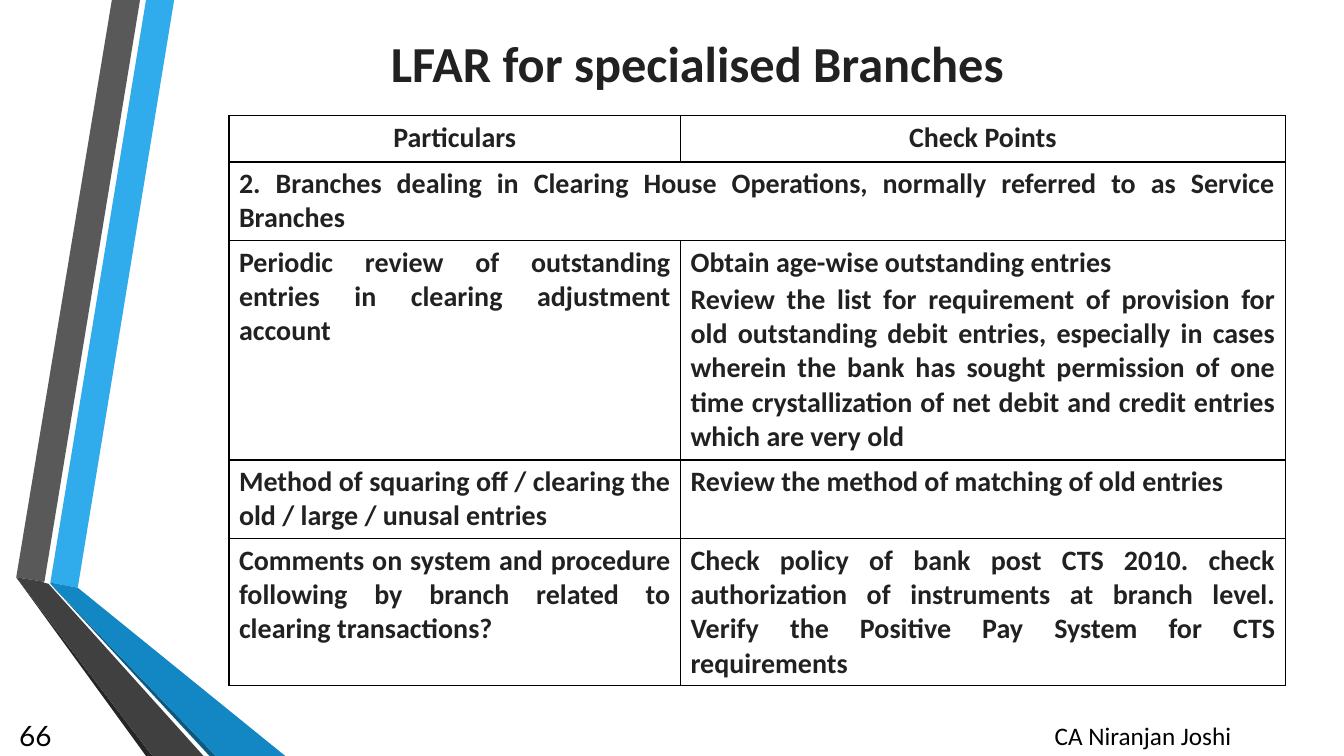
from dataclasses import dataclass

from lxml import etree
from pptx import Presentation
from pptx import util as u
from pptx.dml import color
from pptx.enum import text
from pptx.oxml import ns

ALIGN = text.PP_ALIGN


@dataclass(frozen=True)
class Theme:
    ink: str = "212121"
    black: str = "000000"
    blue: str = "30ACEC"
    blue_fold: str = "1287C3"
    blue_edge: str = "0C5A82"
    grey: str = "595959"
    grey_fold: str = "404040"
    grey_edge: str = "262626"
    font: str = "Calibri"
    number_font: str = "Lato"
    title_size: int = 36
    body_size: int = 20
    footer_size: int = 18
    paragraph_gap: int = 2
    border_width: int = 1


THEME = Theme()

# Ribbon outlines in centimetres, from back to front
RIBBONS = [
    (THEME.blue, [(1.27, 14.68), (1.96, 14.81), (4.39, 0), (3.68, 0)]),
    (THEME.grey, [(3.53, 0), (2.82, 0), (0.41, 14.55), (1.12, 14.66)]),
    (THEME.grey_edge, [(0.41, 14.55), (3.68, 19.05), (3.84, 19.05)]),
    (THEME.blue_edge, [(1.27, 14.71), (5.28, 19.05), (5.44, 19.05)]),
    (THEME.blue_fold, [(1.27, 14.71), (5.44, 19.05), (7.19, 19.05),
                       (1.96, 14.81), (1.27, 14.68)]),
    (THEME.grey_fold, [(5.13, 19.05), (1.22, 14.71), (1.09, 14.68),
                       (1.12, 14.66), (0.41, 14.55), (3.84, 19.05)]),
]

COLUMN_WIDTHS = [11.38, 15.24]
# Row height and the paragraphs of each cell; a lone cell spans the row
ROWS = [
    (1.16, [["Particulars"], ["Check Points"]]),
    (1.98, [["2. Branches dealing in Clearing House Operations, "
             "normally referred to as Service Branches"]]),
    (5.53, [["Periodic review of outstanding entries in clearing "
             "adjustment account"],
            ["Obtain age-wise outstanding entries",
             "Review the list for requirement of provision for old "
             "outstanding debit entries, especially in cases wherein the "
             "bank has sought permission of one time crystallization of net "
             "debit and credit entries which are very old"]]),
    (1.98, [["Method of squaring off / clearing the old / large / unusal "
             "entries"],
            ["Review the method of matching of old entries"]]),
    (3.7, [["Comments on system and procedure following by branch related "
            "to clearing transactions?"],
           ["Check policy of bank post CTS 2010. check authorization of "
            "instruments at branch level. Verify the Positive Pay System "
            "for CTS requirements"]]),
]


def rgb(value):
    return color.RGBColor.from_string(value)


def style_paragraph(paragraph, size, ink, align, bold=False, font=THEME.font):
    paragraph.alignment = align
    paragraph.font.name = font
    paragraph.font.size = u.Pt(size)
    paragraph.font.bold = bold
    paragraph.font.color.rgb = rgb(ink)


def add_ribbon(slide, fill, points):
    corners = [(u.Cm(x), u.Cm(y)) for x, y in points]
    builder = slide.shapes.build_freeform(*corners[0])
    builder.add_line_segments(corners[1:], close=True)
    shape = builder.convert_to_shape()
    shape.shadow.inherit = False
    shape.fill.solid()
    shape.fill.fore_color.rgb = rgb(fill)
    shape.line.fill.background()


def add_label(slide, box, words, size, ink, align,
              anchor=text.MSO_ANCHOR.MIDDLE, **style):
    frame = slide.shapes.add_textbox(*map(u.Cm, box)).text_frame
    frame.word_wrap = True
    frame.vertical_anchor = anchor
    frame.text = words
    style_paragraph(frame.paragraphs[0], size, ink, align, **style)


def add_borders(cell):
    properties = cell._tc.get_or_add_tcPr()
    for index, side in enumerate(("lnL", "lnR", "lnT", "lnB")):
        line = etree.Element(ns.qn(f"a:{side}"),
                             w=str(u.Pt(THEME.border_width)))
        fill = etree.SubElement(line, ns.qn("a:solidFill"))
        etree.SubElement(fill, ns.qn("a:srgbClr"), val=THEME.black)
        properties.insert(index, line)


def fill_cell(cell, paragraphs, align):
    cell.text = "\n".join(paragraphs)
    for index, paragraph in enumerate(cell.text_frame.paragraphs):
        style_paragraph(paragraph, THEME.body_size, THEME.ink, align, bold=True)
        if index:
            paragraph.space_before = u.Pt(THEME.paragraph_gap)


def add_checklist(slide, left, top):
    width = sum(COLUMN_WIDTHS)
    height = sum(row_height for row_height, _ in ROWS)
    table = slide.shapes.add_table(
        len(ROWS), len(COLUMN_WIDTHS),
        *map(u.Cm, (left, top, width, height))).table
    table.first_row = table.horz_banding = False
    for column, column_width in zip(table.columns, COLUMN_WIDTHS):
        column.width = u.Cm(column_width)
    for index, (row_height, contents) in enumerate(ROWS):
        row = table.rows[index]
        row.height = u.Cm(row_height)
        for cell in row.cells:
            cell.fill.background()
            add_borders(cell)
        if len(contents) == 1:
            row.cells[0].merge(row.cells[1])
        align = ALIGN.JUSTIFY if index else ALIGN.CENTER
        for cell, paragraphs in zip(row.cells, contents):
            fill_cell(cell, paragraphs, align)


def main():
    presentation = Presentation()
    presentation.slide_width = u.Cm(33.87)
    presentation.slide_height = u.Cm(19.05)
    slide = presentation.slides.add_slide(presentation.slide_layouts[6])

    # Folded ribbons on the left
    for fill, points in RIBBONS:
        add_ribbon(slide, fill, points)

    # Title and table
    add_label(slide, (6.15, 0.64, 22.86, 1.88), "LFAR for specialised Branches",
              THEME.title_size, THEME.ink, ALIGN.CENTER, bold=True)
    add_checklist(slide, 5.77, 2.92)

    # Footer
    add_label(slide, (24.36, 18.03, 8.89, 1.02), "CA Niranjan Joshi",
              THEME.footer_size, THEME.black, ALIGN.CENTER,
              anchor=text.MSO_ANCHOR.TOP)
    add_label(slide, (0.03, 18.03, 1.52, 1.02), "66", THEME.body_size,
              THEME.black, ALIGN.RIGHT, font=THEME.number_font)

    presentation.save("out.pptx")


if __name__ == "__main__":
    main()
